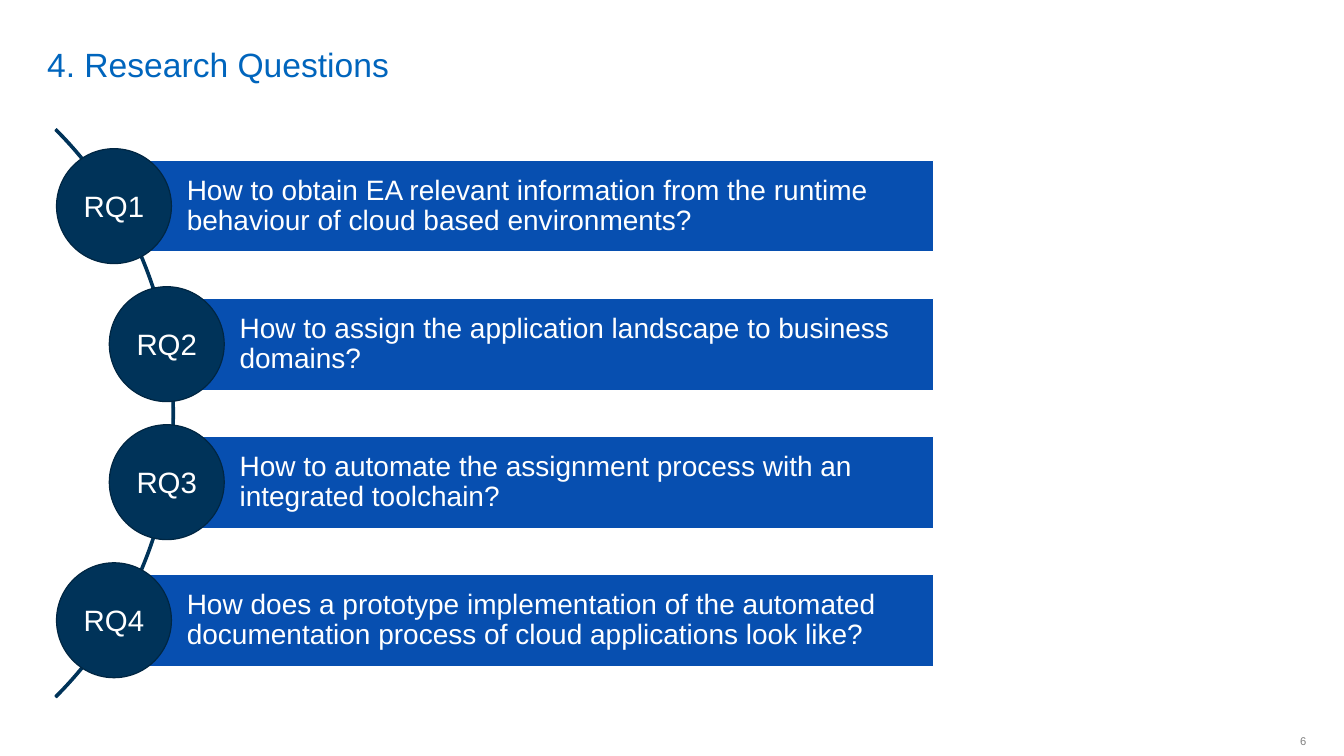
import pptx
import pptx.util
import pptx.dml.color
import pptx.enum.shapes
import pptx.enum.text

Pt = pptx.util.Pt
Shape = pptx.enum.shapes.MSO_SHAPE
Align = pptx.enum.text.PP_ALIGN
Anchor = pptx.enum.text.MSO_ANCHOR

COLORS = {
    "title": "0065BD",
    "number": "808080",
    "navy": "003359",
    "rim": "002642",
    "bar": "074FB0",
    "white": "FFFFFF",
}
QUESTIONS = [
    "How to obtain EA relevant information from the runtime behaviour of cloud based environments?",
    "How to assign the application landscape to business domains?",
    "How to automate the assignment process with an integrated toolchain?",
    "How does a prototype implementation of the automated documentation process "
    "of cloud applications look like?",
]


def rgb(name):
    """Return the named colour."""
    return pptx.dml.color.RGBColor.from_string(COLORS[name])


def write(holder, text, size, color, align, anchor, insets):
    """Put one run of Arial text in a shape or text box and return its paragraph."""
    frame = holder.text_frame
    frame.word_wrap = True
    frame.vertical_anchor = anchor
    (frame.margin_left, frame.margin_top,
     frame.margin_right, frame.margin_bottom) = [Pt(inset) for inset in insets]
    paragraph = frame.paragraphs[0]
    paragraph.alignment = align
    run = paragraph.add_run()
    run.text = text
    run.font.name = "Arial"
    run.font.size = Pt(size)
    run.font.color.rgb = rgb(color)
    return paragraph


def add_filled(slide, kind, box, fill, line):
    """Add a flat preset shape with a thin outline."""
    shape = slide.shapes.add_shape(kind, *[Pt(length) for length in box])
    shape.shadow.inherit = False
    shape.fill.solid()
    shape.fill.fore_color.rgb = rgb(fill)
    shape.line.color.rgb = rgb(line)
    shape.line.width = Pt(0.85)
    return shape


def add_title(slide, box):
    """Add the slide heading."""
    heading = slide.shapes.add_textbox(*[Pt(length) for length in box])
    write(heading, "4. Research Questions", 24, "title",
          Align.LEFT, Anchor.BOTTOM, (7.2, 0, 7.2, 0))


def add_page_number(slide, box):
    """Add the page number."""
    number = slide.shapes.add_textbox(*[Pt(length) for length in box])
    write(number, "6", 8, "number", Align.RIGHT, Anchor.MIDDLE, (7.2, 3.6, 0, 3.6))


def add_question(slide, box, label, question):
    """Add a numbered disc and the bar that starts at its centre."""
    left, top, width, diameter = box
    bar_height = 65.7
    bar_left = left + diameter / 2
    bar_top = top + (diameter - bar_height) / 2
    bar = add_filled(slide, Shape.RECTANGLE,
                     (bar_left, bar_top, width - diameter / 2, bar_height), "bar", "white")
    paragraph = write(bar, question, 20, "white",
                      Align.LEFT, Anchor.MIDDLE, (52, 4.3, 4.3, 4.3))
    paragraph.line_spacing = 0.9
    disc = add_filled(slide, Shape.OVAL, (left, top, diameter, diameter), "navy", "rim")
    write(disc, label, 21, "white", Align.CENTER, Anchor.MIDDLE, (7.2, 3.6, 7.2, 3.6))


def add_question_list(slide, box):
    """Add the curved spine and the questions spaced evenly along it."""
    left, top, width, height = box
    diameter, indent, arc_size = 82.1, 37.7, 574.6
    pitch = (height - diameter) / (len(QUESTIONS) - 1)
    spine = add_filled(slide, Shape.BLOCK_ARC,
                       (left + 84.2 - arc_size, top + (height - arc_size) / 2,
                        arc_size, arc_size), "navy", "navy")
    for index, setting in enumerate((189, 27, 0.003)):
        spine.adjustments[index] = setting
    for index, question in enumerate(QUESTIONS):
        shift = indent if 0 < index < len(QUESTIONS) - 1 else 0
        add_question(slide, (left + shift, top + index * pitch, width - shift, diameter),
                     f"RQ{index + 1}", question)


def main():
    """Build the slide and save it."""
    deck = pptx.Presentation()
    deck.slide_width, deck.slide_height = Pt(960), Pt(540)
    slide = deck.slides.add_slide(deck.slide_layouts[6])
    add_title(slide, (26.6, 3.6, 833.8, 56.9))
    add_question_list(slide, (40.4, 106.2, 626.3, 377.9))
    add_page_number(slide, (907.2, 517.7, 25.9, 23))
    deck.save("out.pptx")


if __name__ == "__main__":
    main()
